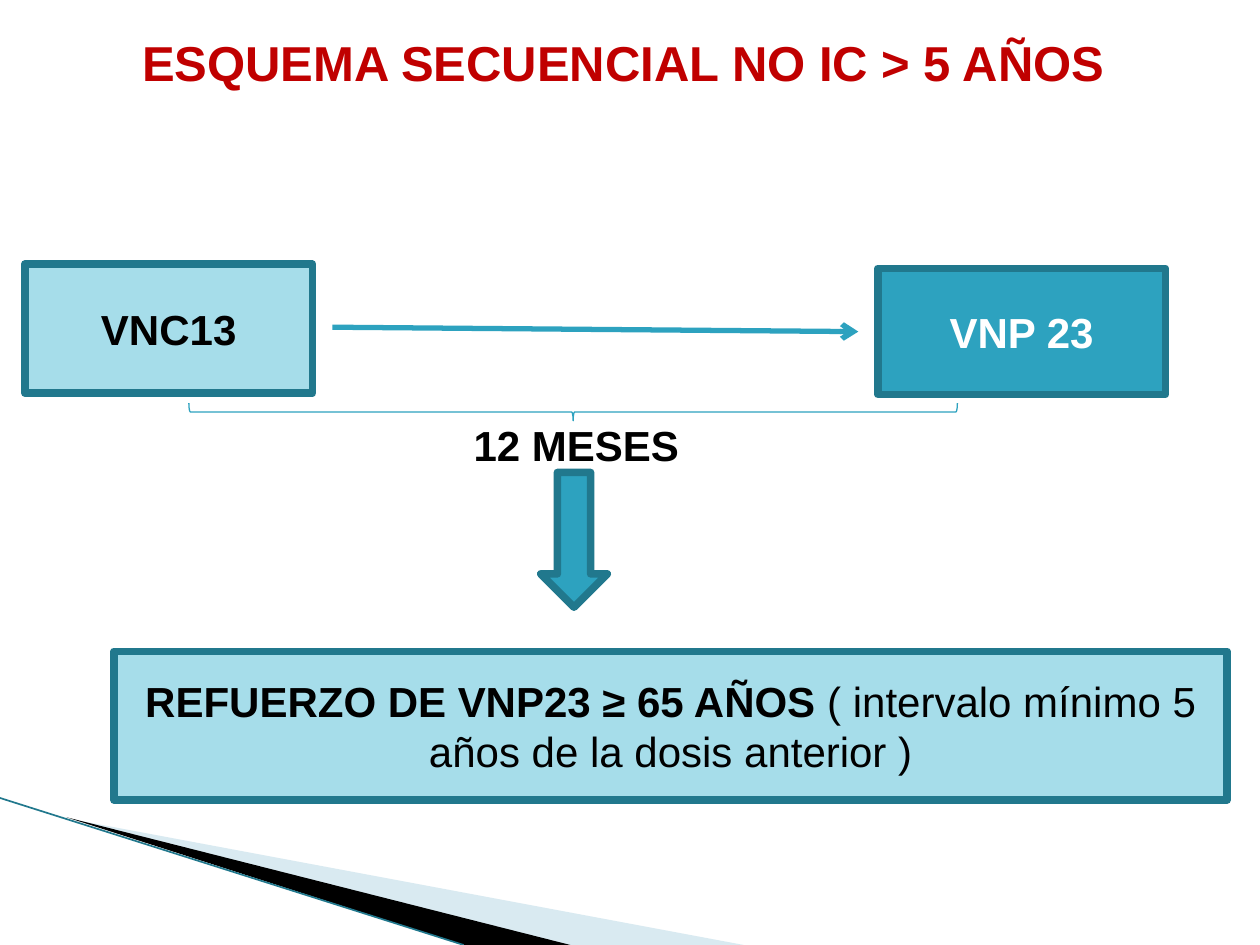
from lxml.etree import SubElement
from pptx import Presentation
from pptx.dml.color import RGBColor
from pptx.enum.shapes import MSO_CONNECTOR as CONNECTOR, MSO_SHAPE as SHAPE
from pptx.enum.text import MSO_ANCHOR as ANCHOR, PP_ALIGN as ALIGN
from pptx.oxml.ns import qn
from pptx.util import Pt

TEAL = RGBColor(0x2D, 0xA2, 0xBF)
DARK_TEAL = RGBColor(0x21, 0x78, 0x8D)
PALE_TEAL = RGBColor(0xA6, 0xDD, 0xEA)
MIST = RGBColor(0xA0, 0xCB, 0xDC)
RED = RGBColor(0xC0, 0x00, 0x00)
BLACK = RGBColor(0x00, 0x00, 0x00)
WHITE = RGBColor(0xFF, 0xFF, 0xFF)

deck = Presentation()
deck.slide_width, deck.slide_height = Pt(720), Pt(540)
page = deck.slides.add_slide(deck.slide_layouts[6])


def write(box, runs, size, color, align=ALIGN.CENTER):
    para = box.text_frame.paragraphs[0]
    para.alignment = align
    para.font.name = "Arial"
    para.font.size = Pt(size)
    para.font.color.rgb = color
    for text, bold in runs:
        span = para.add_run()
        span.text = text
        span.font.bold = bold


def add_line(start, end, color, width):
    line = page.shapes.add_connector(CONNECTOR.STRAIGHT, *map(Pt, start + end))
    line.line.color.rgb = color
    line.line.width = Pt(width)
    SubElement(line._element.spPr, qn("a:effectLst"))
    return line


wedges = [
    (MIST, [(39.6, 468), (425, 540), (325, 540)]),
    (BLACK, [(38.2, 467.3), (326, 540), (265, 540)]),
]
for color, points in wedges:
    builder = page.shapes.build_freeform(*points[0], scale=Pt(1))
    builder.add_line_segments(points[1:], close=True)
    wedge = builder.convert_to_shape()
    wedge.shadow.inherit = False
    wedge.fill.solid()
    wedge.fill.fore_color.rgb = color
    wedge.line.fill.background()
    if color == MIST:
        tint = wedge._element.spPr.find(f"{qn('a:solidFill')}/{qn('a:srgbClr')}")
        SubElement(tint, qn("a:alpha"), val="40000")
add_line((0, 456), (265, 540), DARK_TEAL, 0.95)

title = page.shapes.add_textbox(Pt(0), Pt(15.1), Pt(720), Pt(41))
title.text_frame.word_wrap = True
write(title, [("ESQUEMA SECUENCIAL NO IC > 5 AÑOS ", True)], 28, RED)

arrow = add_line((190, 187), (490.5, 189.5), TEAL, 3)
SubElement(arrow.line._get_or_add_ln(), qn("a:tailEnd"), type="arrow")

brace = page.shapes.add_shape(SHAPE.RIGHT_BRACE, Pt(322.5), Pt(15.8), Pt(10), Pt(439.2))
brace.rotation = 90
brace.shadow.inherit = False
brace.fill.background()
brace.line.color.rgb = TEAL
brace.line.width = Pt(0.75)

interval = page.shapes.add_textbox(Pt(263.5), Pt(236.2), Pt(133.2), Pt(36))
interval.text_frame.word_wrap = False
write(interval, [("12 MESES", True)], 24, BLACK, ALIGN.LEFT)

booster = [
    ("REFUERZO DE VNP23 ≥ 65 AÑOS", True),
    (" ( intervalo mínimo 5 años de la dosis anterior )", False),
]
blocks = [
    (SHAPE.RECTANGLE, (14.2, 151, 164.4, 73.7), PALE_TEAL, BLACK, [("VNC13", True)]),
    (SHAPE.RECTANGLE, (501.6, 153.4, 164.4, 72), TEAL, WHITE, [("VNP 23", True)]),
    (SHAPE.DOWN_ARROW, (309, 270, 38, 77), TEAL, WHITE, []),
    (SHAPE.RECTANGLE, (65.2, 372.2, 636, 85), PALE_TEAL, BLACK, booster),
]
for kind, place, fill, ink, runs in blocks:
    block = page.shapes.add_shape(kind, *map(Pt, place))
    block.shadow.inherit = False
    block.fill.solid()
    block.fill.fore_color.rgb = fill
    block.line.color.rgb = DARK_TEAL
    block.line.width = Pt(4.33)
    block.text_frame.word_wrap = True
    block.text_frame.vertical_anchor = ANCHOR.MIDDLE
    if runs:
        write(block, runs, 24, ink)

deck.save("out.pptx")
